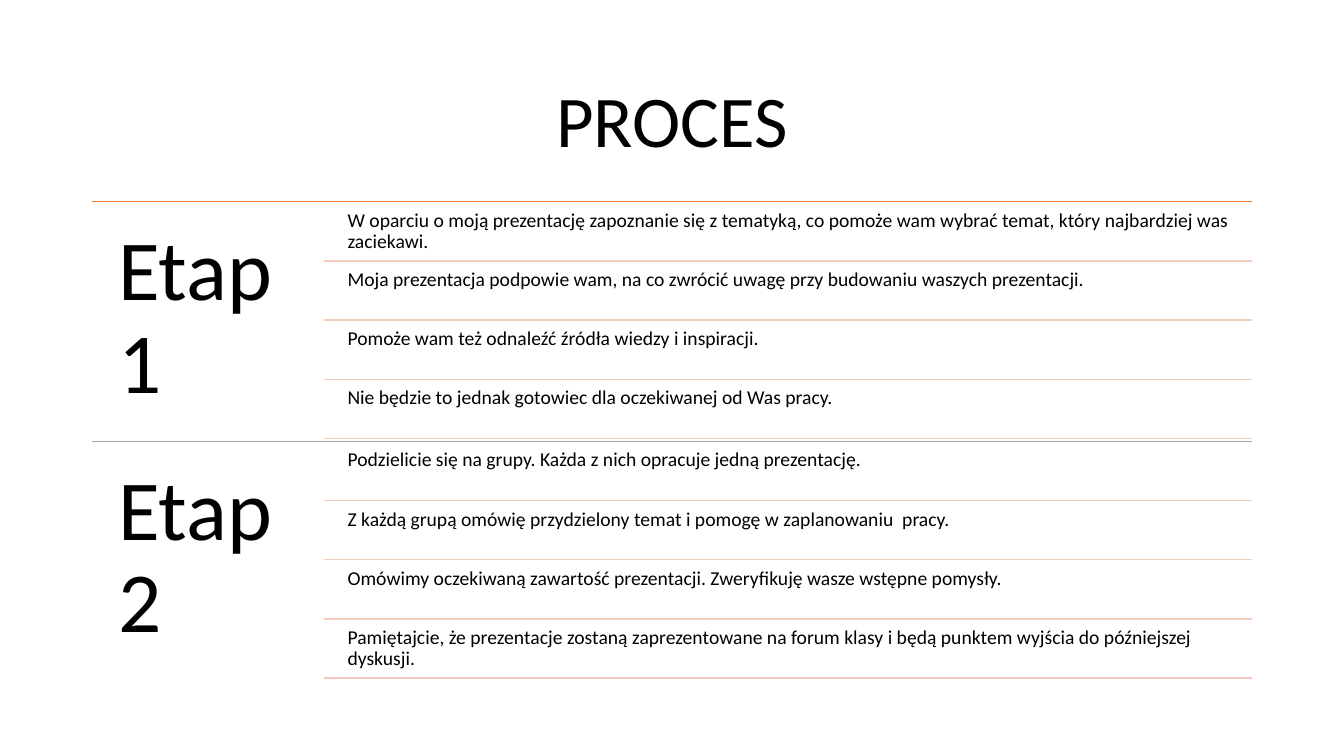
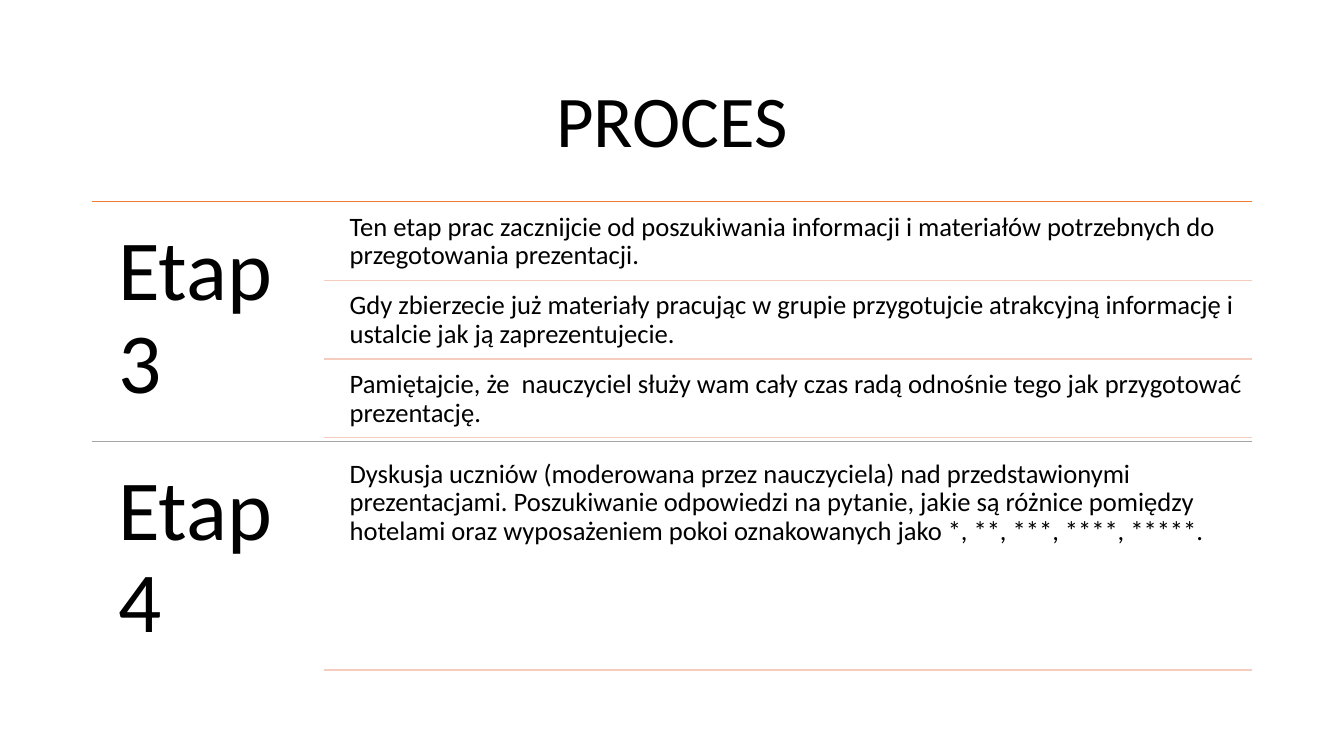
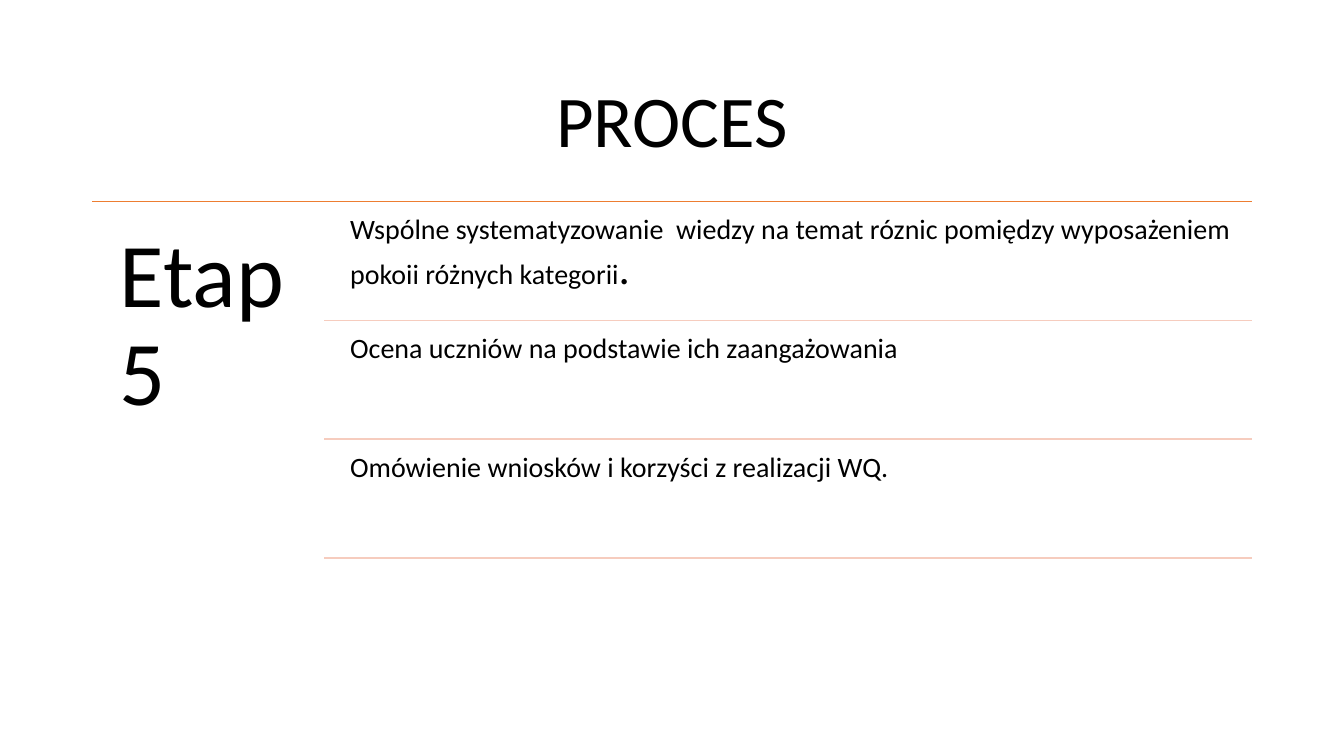
from dataclasses import dataclass

from lxml.etree import SubElement
from pptx import Presentation
from pptx.dml.color import RGBColor
from pptx.enum.shapes import MSO_CONNECTOR as Link
from pptx.enum.text import MSO_ANCHOR as Anchor, PP_ALIGN as Align
from pptx.oxml.ns import qn
from pptx.slide import Slide
from pptx.text.text import _Paragraph as Paragraph, _Run as Run
from pptx.util import Cm, Pt

COLORS = {
    "text": "000000",
    "first_stage": "ED7D31",
    "second_stage": "A5A5A5",
    "step": "F6CCBE",
}
STAGE_COLORS = ("first_stage", "second_stage")
FONT = "Calibri"

LEFT, WIDTH = 2.33, 29.21
RIGHT = LEFT + WIDTH
STAGES_TOP = 5.08
LABEL_WIDTH = WIDTH / 5
STEPS_LEFT = LEFT + LABEL_WIDTH
STEP_INDENT = 0.44
GAP_SHARE = 0.05
INSET_SHARE = 0.3
CM_PER_POINT = 2.54 / 72


@dataclass(frozen=True)
class Box:
    left: float
    top: float
    width: float
    height: float


@dataclass(frozen=True)
class Stage:
    label: str
    steps: tuple[str, ...]
    closing: str = ""


@dataclass(frozen=True)
class Process:
    stages: tuple[Stage, ...]
    stage_height: float
    label_size: float
    step_size: float


TITLE = "PROCES"
TITLE_BOX = Box(LEFT, 1.55, WIDTH, 3.15)
TITLE_SIZE = 52
CLOSING_SIZE = 32

PROCESSES = (
    Process(
        (
            Stage(
                "Etap 1",
                (
                    "W oparciu o moją prezentację zapoznanie się z tematyką, co pomoże wam "
                    "wybrać temat, który najbardziej was zaciekawi.",
                    "Moja prezentacja podpowie wam, na co zwrócić uwagę przy budowaniu "
                    "waszych prezentacji.",
                    "Pomoże wam też odnaleźć źródła wiedzy i inspiracji.",
                    "Nie będzie to jednak gotowiec dla oczekiwanej od Was pracy.",
                ),
            ),
            Stage(
                "Etap 2",
                (
                    "Podzielicie się na grupy. Każda z nich opracuje jedną prezentację.",
                    "Z każdą grupą omówię przydzielony temat i pomogę w zaplanowaniu  pracy.",
                    "Omówimy oczekiwaną zawartość prezentacji. Zweryfikuję wasze wstępne "
                    "pomysły.",
                    "Pamiętajcie, że prezentacje zostaną zaprezentowane na forum klasy i będą "
                    "punktem wyjścia do późniejszej dyskusji.",
                ),
            ),
        ),
        stage_height=6.04,
        label_size=61,
        step_size=14,
    ),
    Process(
        (
            Stage(
                "Etap 3",
                (
                    "Ten etap prac zacznijcie od poszukiwania informacji i materiałów "
                    "potrzebnych do przegotowania prezentacji.",
                    "Gdy zbierzecie już materiały pracując w grupie przygotujcie atrakcyjną "
                    "informację i ustalcie jak ją zaprezentujecie.",
                    "Pamiętajcie, że  nauczyciel służy wam cały czas radą odnośnie tego jak "
                    "przygotować prezentację.",
                ),
            ),
            Stage(
                "Etap 4",
                (
                    "Dyskusja uczniów (moderowana przez nauczyciela) nad przedstawionymi "
                    "prezentacjami. Poszukiwanie odpowiedzi na pytanie, jakie są różnice "
                    "pomiędzy hotelami oraz wyposażeniem pokoi oznakowanych jako "
                    "*, **, ***, ****, *****.",
                ),
            ),
        ),
        stage_height=6.04,
        label_size=61,
        step_size=19,
    ),
    Process(
        (
            Stage(
                "Etap 5",
                (
                    "Wspólne systematyzowanie  wiedzy na temat róznic pomiędzy wyposażeniem "
                    "pokoii różnych kategorii",
                    "Ocena uczniów na podstawie ich zaangażowania",
                    "Omówienie wniosków i korzyści z realizacji WQ.",
                ),
                closing=".",
            ),
        ),
        stage_height=9.12,
        label_size=65,
        step_size=20,
    ),
)


def format_run(run: Run, size: float) -> None:
    run.font.name = FONT
    run.font.size = Pt(size)
    run.font.color.rgb = RGBColor.from_string(COLORS["text"])


def add_text(slide: Slide, box: Box, text: str, size: float) -> Paragraph:
    frame = slide.shapes.add_textbox(
        Cm(box.left), Cm(box.top), Cm(box.width), Cm(box.height)
    ).text_frame
    frame.word_wrap = True
    inset = Cm(size * INSET_SHARE * CM_PER_POINT)
    frame.margin_left = frame.margin_right = inset
    frame.margin_top = frame.margin_bottom = inset
    frame.text = text
    paragraph = frame.paragraphs[0]
    paragraph.line_spacing = 0.9
    format_run(paragraph.runs[0], size)
    return paragraph


def add_title(slide: Slide) -> None:
    box = TITLE_BOX
    frame = slide.shapes.add_textbox(
        Cm(box.left), Cm(box.top), Cm(box.width), Cm(box.height)
    ).text_frame
    frame.word_wrap = True
    frame.vertical_anchor = Anchor.MIDDLE
    frame.text = TITLE
    heading = frame.paragraphs[0]
    heading.alignment = Align.CENTER
    heading.line_spacing = 0.9
    heading.space_after = Pt(6)
    format_run(heading.runs[0], TITLE_SIZE)


def add_rule(slide: Slide, left: float, top: float, color: str) -> None:
    rule = slide.shapes.add_connector(
        Link.STRAIGHT, Cm(left), Cm(top), Cm(RIGHT), Cm(top)
    )
    rule.line.color.rgb = RGBColor.from_string(COLORS[color])
    rule.line.width = Pt(1)
    SubElement(rule._element.spPr, qn("a:effectLst"))


def add_stage(
    slide: Slide, process: Process, stage: Stage, top: float, color: str
) -> None:
    add_rule(slide, LEFT, top, color)
    label_box = Box(LEFT, top, LABEL_WIDTH, process.stage_height)
    add_text(slide, label_box, stage.label, process.label_size)

    count = len(stage.steps)
    step_height = process.stage_height / (count + (count + 1) * GAP_SHARE)
    gap = step_height * GAP_SHARE
    step_left = STEPS_LEFT + STEP_INDENT
    for index, step in enumerate(stage.steps):
        step_top = top + gap + index * (step_height + gap)
        step_box = Box(step_left, step_top, RIGHT - step_left, step_height)
        paragraph = add_text(slide, step_box, step, process.step_size)
        if index == 0 and stage.closing:
            closing = paragraph.add_run()
            closing.text = stage.closing
            format_run(closing, CLOSING_SIZE)
        add_rule(slide, STEPS_LEFT, step_top + step_height, "step")


def main() -> None:
    deck = Presentation()
    deck.slide_width, deck.slide_height = Cm(33.87), Cm(19.05)
    blank = deck.slide_layouts[6]
    for process in PROCESSES:
        slide = deck.slides.add_slide(blank)
        add_title(slide)
        for index, (stage, color) in enumerate(zip(process.stages, STAGE_COLORS)):
            top = STAGES_TOP + index * process.stage_height
            add_stage(slide, process, stage, top, color)
    deck.save("out.pptx")


if __name__ == "__main__":
    main()
